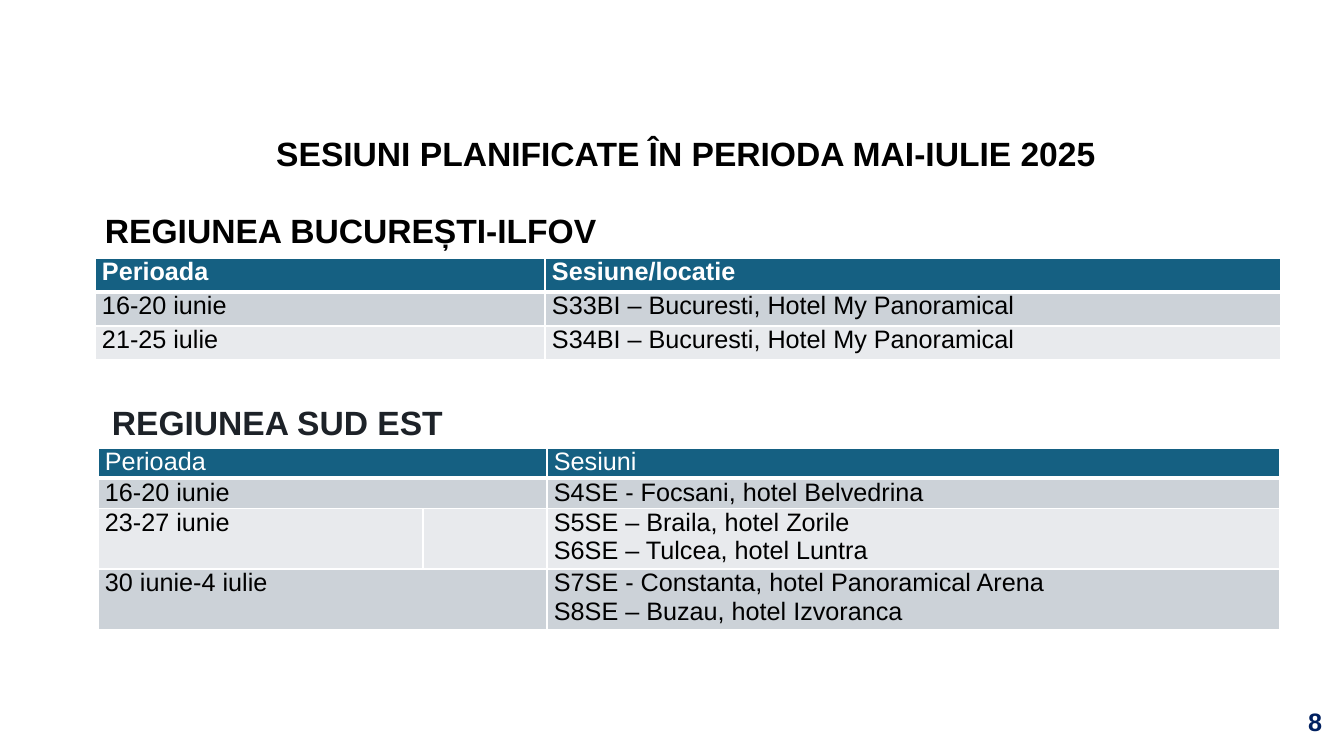
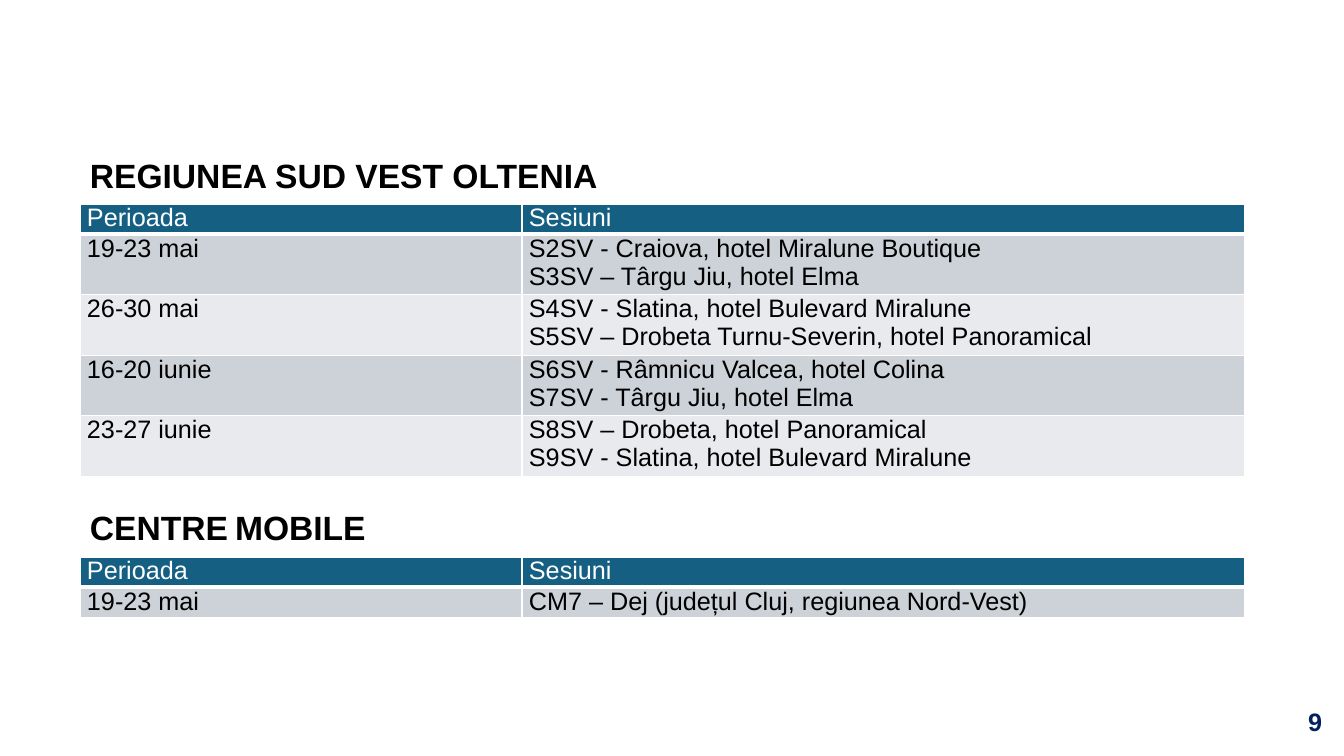
from dataclasses import dataclass

from lxml.etree import SubElement
from pptx import Presentation
from pptx.dml.color import RGBColor
from pptx.enum.text import PP_ALIGN
from pptx.oxml.ns import qn
from pptx.util import Emu, Pt


@dataclass(frozen=True)
class Theme:
    font: str = "Arial"
    black: str = "000000"
    charcoal: str = "1D2228"
    white: str = "FFFFFF"
    navy: str = "002060"
    header: str = "156082"
    bands: tuple = ("CCD2D8", "E8EAED")
    heading_size: int = 24
    body_size: int = 18
    thin: int = 1
    thick: int = 3


theme = Theme()
SLIDE_WIDTH, SLIDE_HEIGHT = 1344, 756
EMU_PER_PX = 12192000 / SLIDE_WIDTH
LINE_HEIGHT = 30
HEADING_HEIGHT = 50


def px(length):
    return Emu(round(length * EMU_PER_PX))


def write(paragraph, runs, color, bold, align=PP_ALIGN.LEFT):
    paragraph.alignment = align
    for words, size in runs:
        run = paragraph.add_run()
        run.text = words
        run.font.name = theme.font
        run.font.size = Pt(size)
        run.font.bold = bold
        run.font.color.rgb = RGBColor.from_string(color)


def heading(words):
    return [(words, theme.heading_size)]


pages = [
    {
        "number": "8",
        "headings": [
            (95, 128, 1182, heading("SESIUNI PLANIFICATE ÎN PERIODA MAI-IULIE 2025"),
             theme.black, PP_ALIGN.CENTER),
            (95, 205, 1182, heading("REGIUNEA BUCUREȘTI-ILFOV"), theme.black, PP_ALIGN.LEFT),
            (102, 397, 671, heading("REGIUNEA SUD EST"), theme.charcoal, PP_ALIGN.LEFT),
        ],
        "schedules": [
            {
                "left": 95, "top": 258, "columns": [450, 736],
                "line_height": 34, "bold_header": True,
                "rows": [
                    ("Perioada", ["Sesiune/locatie"]),
                    ("16-20 iunie", ["S33BI – Bucuresti, Hotel My Panoramical"]),
                    ("21-25 iulie", ["S34BI – Bucuresti, Hotel My Panoramical"]),
                ],
            },
            {
                "left": 98, "top": 448, "columns": [325, 124, 733],
                "split_periods": ["23-27 iunie"],
                "rows": [
                    ("Perioada", ["Sesiuni"]),
                    ("16-20 iunie", ["S4SE - Focsani, hotel Belvedrina"]),
                    ("23-27 iunie", ["S5SE – Braila, hotel Zorile", "S6SE – Tulcea, hotel Luntra"]),
                    ("30 iunie-4 iulie", ["S7SE - Constanta, hotel Panoramical Arena",
                                          "S8SE – Buzau, hotel Izvoranca"]),
                ],
            },
        ],
    },
    {
        "number": "9",
        "headings": [
            (80, 150, 1202, heading("REGIUNEA SUD VEST OLTENIA"), theme.black, PP_ALIGN.LEFT),
            (80, 502, 671,
             heading("CENTRE") + [(" ", theme.body_size)] + heading("MOBILE"),
             theme.black, PP_ALIGN.LEFT),
        ],
        "schedules": [
            {
                "left": 80, "top": 204, "columns": [442, 723],
                "rows": [
                    ("Perioada", ["Sesiuni"]),
                    ("19-23 mai", ["S2SV - Craiova, hotel Miralune Boutique",
                                   "S3SV – Târgu Jiu, hotel Elma"]),
                    ("26-30 mai", ["S4SV - Slatina, hotel Bulevard Miralune",
                                   "S5SV – Drobeta Turnu-Severin, hotel Panoramical"]),
                    ("16-20 iunie", ["S6SV - Râmnicu Valcea, hotel Colina",
                                     "S7SV - Târgu Jiu, hotel Elma"]),
                    ("23-27 iunie", ["S8SV – Drobeta, hotel Panoramical",
                                     "S9SV - Slatina, hotel Bulevard Miralune"]),
                ],
            },
            {
                "left": 80, "top": 557, "columns": [442, 723],
                "rows": [
                    ("Perioada", ["Sesiuni"]),
                    ("19-23 mai", ["CM7 – Dej (județul Cluj, regiunea Nord-Vest)"]),
                ],
            },
        ],
    },
]

presentation = Presentation()
presentation.slide_width = px(SLIDE_WIDTH)
presentation.slide_height = px(SLIDE_HEIGHT)
blank_layout = presentation.slide_layouts[6]

for page in pages:
    slide = presentation.slides.add_slide(blank_layout)
    page_number = (1245, 701, 87, [(page["number"], theme.body_size)],
                   theme.navy, PP_ALIGN.RIGHT)

    for left, top, width, runs, color, align in [page_number, *page["headings"]]:
        frame = slide.shapes.add_textbox(
            px(left), px(top), px(width), px(HEADING_HEIGHT)).text_frame
        frame.word_wrap = True
        write(frame.paragraphs[0], runs, color, True, align)

    for schedule in page["schedules"]:
        rows, columns = schedule["rows"], schedule["columns"]
        line_height = schedule.get("line_height", LINE_HEIGHT)
        heights = [line_height * len(sessions) for period, sessions in rows]
        grid = slide.shapes.add_table(
            len(rows), len(columns), px(schedule["left"]), px(schedule["top"]),
            px(sum(columns)), px(sum(heights))).table
        for column, width in zip(grid.columns, columns):
            column.width = px(width)

        for row_index, (period, sessions) in enumerate(rows):
            grid.rows[row_index].height = px(heights[row_index])
            is_header = row_index == 0
            fill = theme.header if is_header else theme.bands[(row_index - 1) % 2]
            ink = theme.white if is_header else theme.black
            bold = is_header and schedule.get("bold_header", False)
            borders = {
                "a:lnL": theme.thin,
                "a:lnR": theme.thin,
                "a:lnT": theme.thick if row_index == 1 else theme.thin,
                "a:lnB": theme.thick if is_header else theme.thin,
            }
            contents = [[period]] + [[]] * (len(columns) - 2) + [sessions]

            for column_index, lines in enumerate(contents):
                cell = grid.cell(row_index, column_index)
                cell.margin_left = cell.margin_right = px(7)
                cell.margin_top = cell.margin_bottom = 0
                properties = cell._tc.get_or_add_tcPr()
                for side, points in borders.items():
                    line = SubElement(properties, qn(side), w=str(Pt(points)))
                    SubElement(SubElement(line, qn("a:solidFill")),
                               qn("a:srgbClr"), val=theme.white)
                cell.fill.solid()
                cell.fill.fore_color.rgb = RGBColor.from_string(fill)
                frame = cell.text_frame
                for line_index, words in enumerate(lines):
                    paragraph = frame.add_paragraph() if line_index else frame.paragraphs[0]
                    write(paragraph, [(words, theme.body_size)], ink, bold, PP_ALIGN.JUSTIFY)

            if len(columns) > 2 and period not in schedule["split_periods"]:
                grid.cell(row_index, 0).merge(grid.cell(row_index, len(columns) - 2))

presentation.save("out.pptx")
